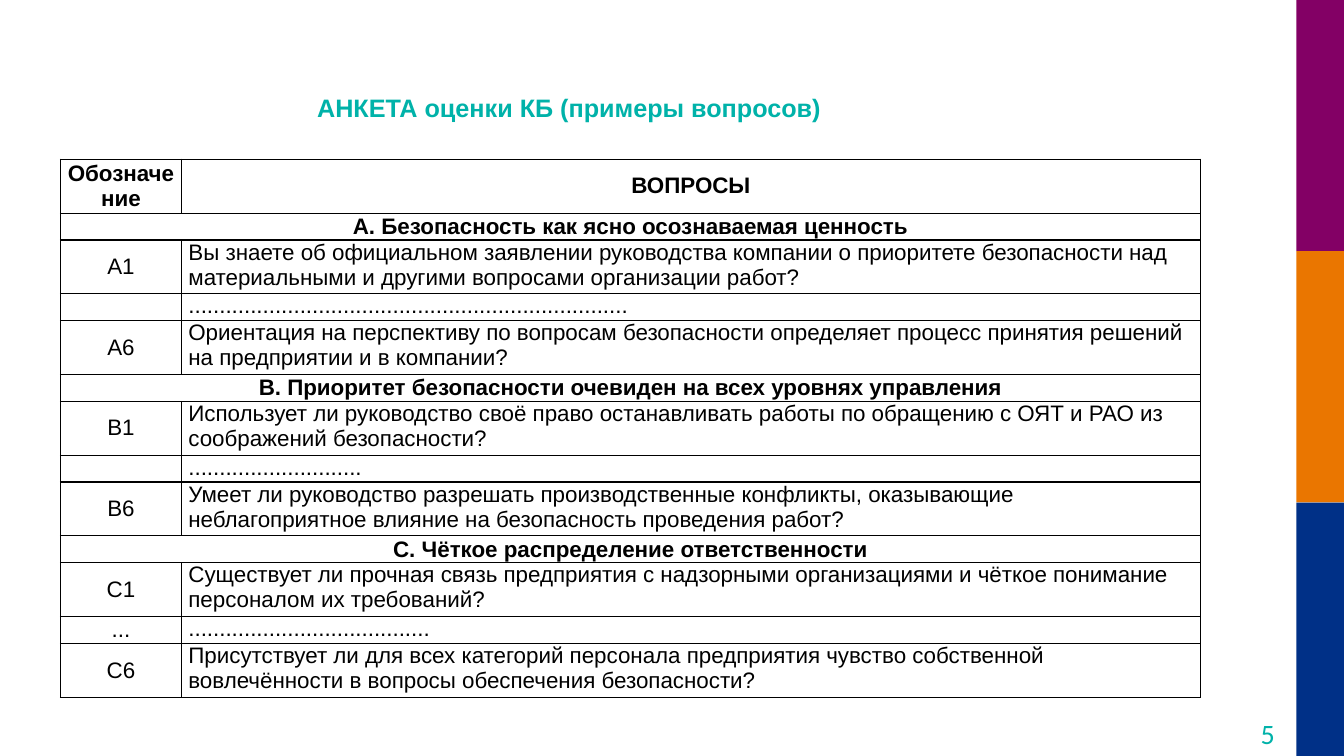
"""Build the slide with the safety culture questionnaire table."""
from lxml.etree import SubElement
from pptx import Presentation
from pptx.dml.color import RGBColor
from pptx.enum.shapes import MSO_SHAPE
from pptx.enum.text import MSO_ANCHOR, MSO_AUTO_SIZE, PP_ALIGN
from pptx.oxml.ns import qn
from pptx.util import Pt

TITLE = "АНКЕТА оценки КБ (примеры вопросов)"
PAGE = "5"
HEADER = ("Обозначение", "ВОПРОСЫ")
SECTIONS = [
    ("А. Безопасность как ясно осознаваемая ценность", [
        ("A1", "Вы знаете об официальном заявлении руководства компании о приоритете "
               "безопасности над материальными и другими вопросами организации работ?"),
        ("", "." * 71),
        ("А6", "Ориентация на перспективу по вопросам безопасности определяет процесс "
               "принятия решений на предприятии и в компании?"),
    ]),
    ("B. Приоритет безопасности очевиден на всех уровнях управления", [
        ("B1", "Использует ли руководство своё право останавливать работы по обращению "
               "с ОЯТ и РАО из соображений безопасности?"),
        ("", "." * 28),
        ("B6", "Умеет ли руководство разрешать производственные конфликты, оказывающие "
               "неблагоприятное влияние на безопасность проведения работ?"),
    ]),
    ("С. Чёткое распределение ответственности", [
        ("С1", "Существует ли прочная связь предприятия с надзорными организациями и "
               "чёткое понимание персоналом их требований?"),
        ("...", "." * 39),
        ("С6", "Присутствует ли для всех категорий персонала предприятия чувство "
               "собственной вовлечённости в вопросы обеспечения безопасности?"),
    ]),
]

PURPLE = RGBColor(0x83, 0x00, 0x65)
ORANGE = RGBColor(0xEA, 0x76, 0x00)
NAVY = RGBColor(0x00, 0x30, 0x87)
TEAL = RGBColor(0x00, 0xB2, 0xA9)
BLACK = RGBColor(0x00, 0x00, 0x00)

SLIDE_W, SLIDE_H = 960, 540
BAND_X = 926
BANDS = [(PURPLE, 0, 179.5), (ORANGE, 179.5, 359), (NAVY, 359, SLIDE_H)]
TABLE_X, TABLE_Y = 43.2, 113.8
COLS = (86.4, 727.9)
LINE_H = 19.2
TEXT_SIZE = 16


def add_text(p, text, size, color, bold=False, font="Arial", align=PP_ALIGN.CENTER):
    p.alignment = align
    r = p.add_run()
    r.text = text
    r.font.name, r.font.size, r.font.bold = font, Pt(size), bold
    r.font.color.rgb = color


def add_borders(cell):
    tc_pr = cell._tc.get_or_add_tcPr()
    for side in ("lnL", "lnR", "lnT", "lnB"):
        ln = SubElement(tc_pr, qn(f"a:{side}"), w=str(Pt(1)))
        fill = SubElement(ln, qn("a:solidFill"))
        SubElement(fill, qn("a:srgbClr"), val=str(BLACK))


def fill_cell(cell, text, bold=False, question=False):
    cell.margin_left = cell.margin_right = Pt(5)
    cell.margin_top = cell.margin_bottom = 0
    cell.vertical_anchor = MSO_ANCHOR.TOP if question else MSO_ANCHOR.MIDDLE
    p = cell.text_frame.paragraphs[0]
    if text:
        align = PP_ALIGN.LEFT if question else PP_ALIGN.CENTER
        add_text(p, text, TEXT_SIZE, BLACK, bold, align=align)
    else:
        SubElement(p._p, qn("a:endParaRPr"), sz=str(TEXT_SIZE * 100))


def add_bands(s):
    for color, top, bottom in BANDS:
        sp = s.shapes.add_shape(MSO_SHAPE.RECTANGLE, Pt(BAND_X), Pt(top),
                                Pt(SLIDE_W - BAND_X), Pt(bottom - top))
        sp.shadow.inherit = False
        sp.fill.solid()
        sp.fill.fore_color.rgb = color
        sp.line.fill.background()


def add_title(s):
    sp = s.shapes.title
    sp.left, sp.top, sp.width, sp.height = Pt(214.5), Pt(53.5), Pt(384), Pt(46)
    tf = sp.text_frame
    tf.word_wrap, tf.auto_size = True, MSO_AUTO_SIZE.NONE
    tf.vertical_anchor = MSO_ANCHOR.MIDDLE
    add_text(tf.paragraphs[0], TITLE, 18, TEAL, bold=True)


def add_page_number(s):
    tf = s.shapes.add_textbox(Pt(868), Pt(514), Pt(42.5), Pt(19.5)).text_frame
    tf.margin_left = tf.margin_right = tf.margin_top = tf.margin_bottom = 0
    tf.word_wrap, tf.vertical_anchor = True, MSO_ANCHOR.MIDDLE
    add_text(tf.paragraphs[0], PAGE, 20, TEAL, font="Calibri", align=PP_ALIGN.RIGHT)


def add_questions(s):
    rows = [HEADER]
    for heading, questions in SECTIONS:
        rows += [(heading,), *questions]
    heights = [LINE_H if len(row) == 1 or row[1].startswith(".") else 2 * LINE_H
               for row in rows]
    table = s.shapes.add_table(len(rows), len(COLS), Pt(TABLE_X), Pt(TABLE_Y),
                               Pt(sum(COLS)), Pt(sum(heights))).table
    table.first_row = table.horz_banding = False
    for col, width in zip(table.columns, COLS):
        col.width = Pt(width)
    for i, (row, height) in enumerate(zip(rows, heights)):
        table.rows[i].height = Pt(height)
        for cell in table.rows[i].cells:
            add_borders(cell)
            cell.fill.background()
        if len(row) == 1:
            table.cell(i, 0).merge(table.cell(i, 1))
        for j, text in enumerate(row):
            fill_cell(table.cell(i, j), text, bold=i == 0 or len(row) == 1,
                      question=i > 0 and j == 1)


def main():
    prs = Presentation()
    prs.slide_width, prs.slide_height = Pt(SLIDE_W), Pt(SLIDE_H)
    s = prs.slides.add_slide(prs.slide_layouts[5])
    add_bands(s)
    add_page_number(s)
    add_title(s)
    add_questions(s)
    prs.save("out.pptx")


if __name__ == "__main__":
    main()
